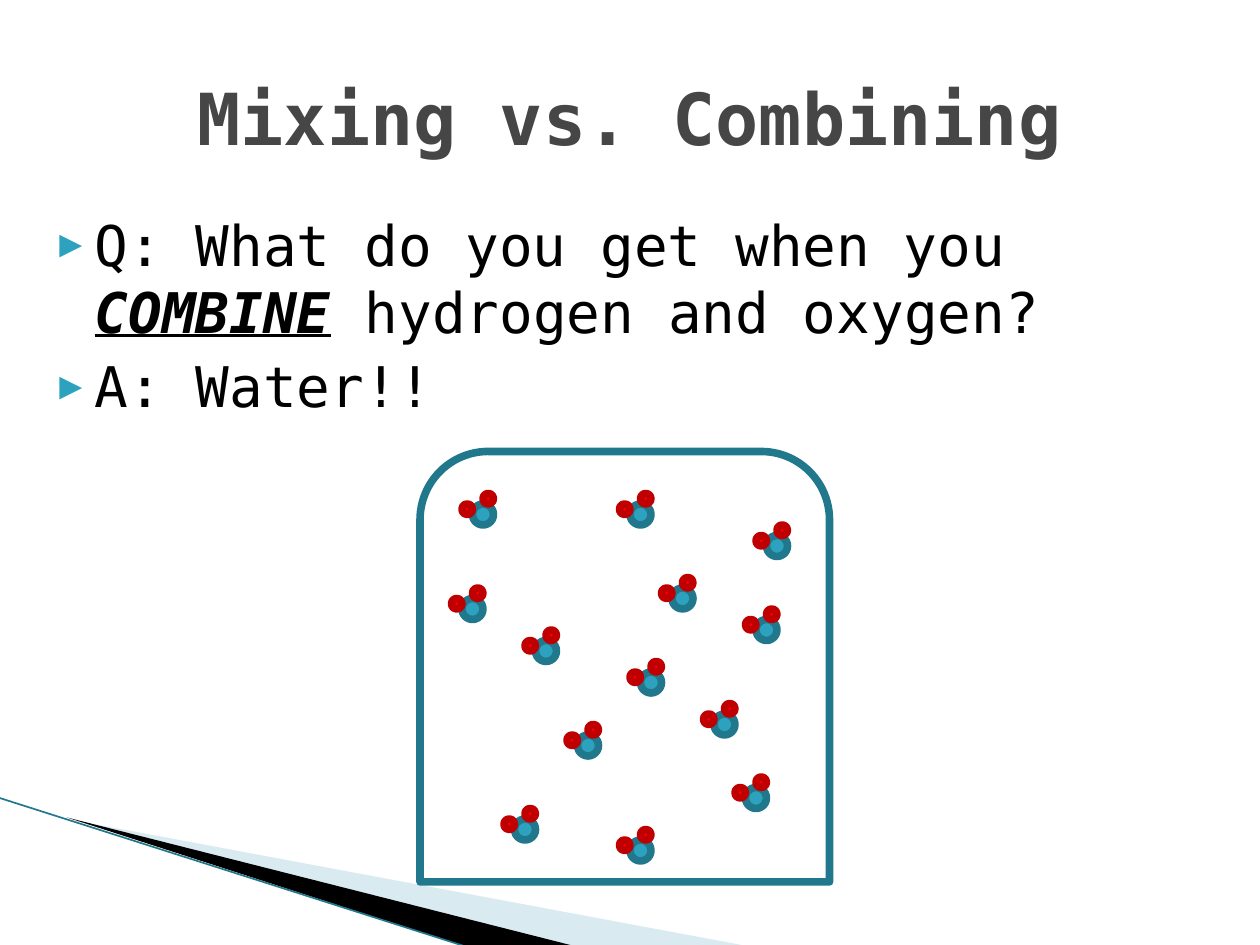
from lxml import etree
from pptx import Presentation
from pptx.dml.color import RGBColor
from pptx.enum.shapes import MSO_CONNECTOR, MSO_SHAPE
from pptx.enum.text import MSO_ANCHOR, PP_ALIGN
from pptx.oxml.ns import qn
from pptx.util import Cm, Pt

ELLIPSE = MSO_SHAPE.OVAL
JAR = MSO_SHAPE.ROUND_2_SAME_RECTANGLE
STRAIGHT = MSO_CONNECTOR.STRAIGHT
MIDDLE, TOP = MSO_ANCHOR.MIDDLE, MSO_ANCHOR.TOP
CENTER = PP_ALIGN.CENTER

FONT = "DejaVu Sans Mono"
TEAL, DARK_TEAL = "2DA2BF", "21788D"
RED, DARK_RED = "FF0000", "C00000"
OUTLINE = 4.33
UNIT = 2.54 / 12  # the drawing sits on a grid of twelfths of an inch, in cm

# Grid positions of the oxygen atoms
MOLECULES = [(45, 48), (55, 70), (44, 57), (72, 59), (51, 61), (64, 56), (68, 68),
             (60, 80), (61, 64), (60, 48), (71, 75), (49, 78), (73, 51)]


def rgb(color):
    return RGBColor.from_string(color)


def add_wedge(s, points, color, opacity=100):
    pts = [(Cm(x), Cm(y)) for x, y in points]
    builder = s.shapes.build_freeform(*pts[0])
    builder.add_line_segments(pts[1:], close=True)
    sp = builder.convert_to_shape()
    sp.shadow.inherit = False
    sp.fill.solid()
    sp.fill.fore_color.rgb = rgb(color)
    sp.line.fill.background()
    if opacity < 100:
        clr = sp._element.spPr.find(".//" + qn("a:srgbClr"))
        etree.SubElement(clr, qn("a:alpha"), val=str(opacity * 1000))


def add_line(s, x1, y1, x2, y2, color, width):
    line = s.shapes.add_connector(STRAIGHT, Cm(x1), Cm(y1), Cm(x2), Cm(y2))
    line.line.color.rgb = rgb(color)
    line.line.width = Pt(width)
    etree.SubElement(line._element.spPr, qn("a:effectLst"))


def add_text_box(s, x, y, w, h, anchor):
    tf = s.shapes.add_textbox(Cm(x), Cm(y), Cm(w), Cm(h)).text_frame
    tf.word_wrap = True
    tf.vertical_anchor = anchor
    return tf


def add_run(p, text, size, color, bold=False, italic=False, underline=False):
    r = p.add_run()
    r.text = text
    f = r.font
    f.name, f.size, f.color.rgb = FONT, Pt(size), rgb(color)
    f.bold, f.italic, f.underline = bold, italic, underline


def set_bullet(p):
    p.space_before = Pt(4)
    pPr = p._p.get_or_add_pPr()
    pPr.set("marL", str(Cm(1.02)))
    pPr.set("indent", str(Cm(-0.71)))
    clr = etree.SubElement(pPr, qn("a:buClr"))
    etree.SubElement(clr, qn("a:srgbClr"), val=TEAL)
    etree.SubElement(pPr, qn("a:buSzPct"), val="68000")
    etree.SubElement(pPr, qn("a:buFont"), typeface=FONT)
    etree.SubElement(pPr, qn("a:buChar"), char="▶")


def add_grid_shape(group, kind, col, row, w, h, line, fill=None):
    sp = group.shapes.add_shape(kind, *(Cm(v * UNIT) for v in (col, row, w, h)))
    sp.shadow.inherit = False
    if fill:
        sp.fill.solid()
        sp.fill.fore_color.rgb = rgb(fill)
    else:
        sp.fill.background()
    sp.line.color.rgb = rgb(line)
    sp.line.width = Pt(OUTLINE)


def add_molecule(group, col, row):
    add_grid_shape(group, ELLIPSE, col, row, 2, 2, DARK_TEAL, TEAL)
    for dx, dy in ((-1, 0), (1, -1)):
        add_grid_shape(group, ELLIPSE, col + dx, row + dy, 1, 1, DARK_RED, RED)


def main():
    prs = Presentation()
    prs.slide_width, prs.slide_height = Cm(25.4), Cm(19.05)
    s = prs.slides.add_slide(prs.slide_layouts[6])

    # Corner decoration
    add_wedge(s, [(1.4, 16.52), (15.11, 19.08), (11.58, 19.08)], "A0CBDC", 40)
    add_wedge(s, [(1.35, 16.48), (11.61, 19.08), (9.45, 19.1)], "000000")
    add_line(s, -0.03, 16.08, 9.45, 19.1, DARK_TEAL, 0.95)

    # Question and answer
    tf = add_text_box(s, 0.64, 4.11, 23.93, 13.67, TOP)
    question = tf.paragraphs[0]
    set_bullet(question)
    add_run(question, "Q: What do you get when you ", 32, "000000")
    add_run(question, "COMBINE", 32, "000000", bold=True, italic=True, underline=True)
    add_run(question, " hydrogen and oxygen?", 32, "000000")
    answer = tf.add_paragraph()
    set_bullet(answer)
    add_run(answer, "A: Water!!", 32, "000000")

    # Title
    title = add_text_box(s, 1.27, 0.76, 22.86, 3.18, MIDDLE).paragraphs[0]
    title.alignment = CENTER
    add_run(title, "Mixing vs. Combining", 41, "464646", bold=True)

    # Jar of water molecules
    group = s.shapes.add_group_shape()
    add_grid_shape(group, JAR, 40, 43, 39, 41, DARK_TEAL)
    for col, row in MOLECULES:
        add_molecule(group, col, row)

    prs.save("out.pptx")


if __name__ == "__main__":
    main()
